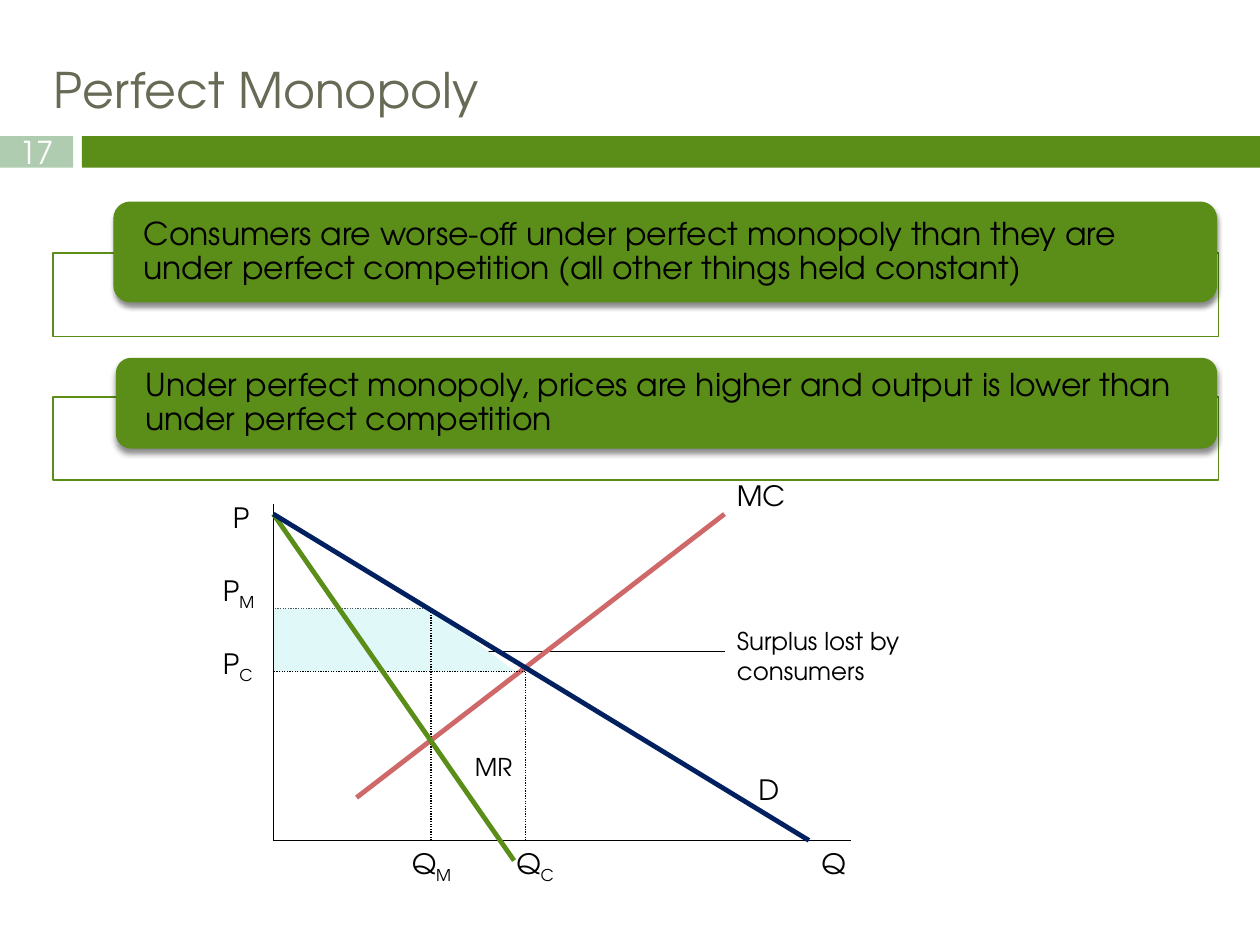
import pptx
import pptx.dml.color
import pptx.enum.dml
import pptx.enum.shapes
import pptx.enum.text
import pptx.oxml
import pptx.oxml.ns
import pptx.util
from pptx.util import Inches

RGBColor = pptx.dml.color.RGBColor
Shape = pptx.enum.shapes.MSO_SHAPE
Anchor = pptx.enum.text.MSO_ANCHOR
Align = pptx.enum.text.PP_ALIGN

GREEN = RGBColor(0x5A, 0x8E, 0x19)
SAGE = RGBColor(0xB0, 0xCC, 0xB0)
OLIVE = RGBColor(0x67, 0x6A, 0x55)
RED = RGBColor(0xCF, 0x68, 0x68)
NAVY = RGBColor(0x00, 0x20, 0x60)
AQUA = RGBColor(0xE0, 0xF8, 0xF7)
BLACK = RGBColor(0, 0, 0)
WHITE = RGBColor(0xFF, 0xFF, 0xFF)

FONT = "TeX Gyre Adventor"
NAMESPACE = pptx.oxml.ns.nsdecls("a")
SHADOW = (
    f'<a:effectLst {NAMESPACE}><a:outerShdw blurRad="38100" dist="30480" dir="5400000" '
    'rotWithShape="0"><a:srgbClr val="000000"><a:alpha val="45000"/></a:srgbClr>'
    "</a:outerShdw></a:effectLst>"
)

presentation = pptx.Presentation()
presentation.slide_width = Inches(10)
presentation.slide_height = Inches(7.5)
slide = presentation.slides.add_slide(presentation.slide_layouts[6])


def add_box(kind, left, top, width, height, fill=None, text="", subscript="",
            size=16, color=BLACK, **frame_format):
    """Add a plain shape, or a text box when kind is None."""
    place = [Inches(value) for value in (left, top, width, height)]
    if kind is None:
        shape = slide.shapes.add_textbox(*place)
    else:
        shape = slide.shapes.add_shape(kind, *place)
        shape.shadow.inherit = False
        shape.fill.solid()
        shape.fill.fore_color.rgb = fill
        shape.line.fill.background()
    frame = shape.text_frame
    for name, value in {"word_wrap": True, **frame_format}.items():
        setattr(frame, name, value)
    for part in filter(None, (text, subscript)):
        run = frame.paragraphs[0].add_run()
        run.text = part
        run.font.color.rgb = color
        for name, value in {"name": FONT, "size": pptx.util.Pt(size)}.items():
            setattr(run.font, name, value)
        if part is subscript:
            run.font._element.set("baseline", "-25000")
    return shape


def add_line(start, end, color=BLACK, width=0.75, dotted=False):
    line = slide.shapes.add_connector(
        pptx.enum.shapes.MSO_CONNECTOR.STRAIGHT,
        *[Inches(value) for value in (*start, *end)])
    line.line.color.rgb = color
    line.line.width = pptx.util.Pt(width)
    if dotted:
        line.line.dash_style = pptx.enum.dml.MSO_LINE.ROUND_DOT
    line._element.spPr.append(pptx.oxml.parse_xml(f"<a:effectLst {NAMESPACE}/>"))
    return line


# Title, page number and header bar
add_box(Shape.RECTANGLE, 0.65, 1.08, 9.35, 0.25, GREEN)
number = add_box(Shape.RECTANGLE, 0, 1.08, 0.58, 0.25, SAGE, "17", size=18, color=WHITE,
                 margin_top=0, margin_bottom=0, vertical_anchor=Anchor.MIDDLE)
number.text_frame.paragraphs[0].alignment = Align.CENTER
add_box(None, 0.33, 0.42, 9.25, 0.65, text="Perfect Monopoly", size=28, color=OLIVE)

# Statements: a green banner over an outlined panel
statements = [
    (2.01, 0.90, 1.60, 8.76, 0.80,
     "Consumers are worse-off under perfect monopoly than they are "
     "under perfect competition (all other things held constant)"),
    (3.15, 0.92, 2.84, 8.74, 0.72,
     "Under perfect monopoly, prices are higher and output is lower than "
     "under perfect competition"),
]
for panel_top, left, top, width, height, text in statements:
    panel = add_box(Shape.RECTANGLE, 0.42, panel_top, 9.25, 0.66, WHITE)
    panel.line.color.rgb = GREEN
    panel.line.width = pptx.util.Pt(0.79)
    banner = add_box(Shape.ROUNDED_RECTANGLE, left, top, width, height, GREEN, text, size=18,
                     margin_left=Inches(0.2), margin_right=Inches(0.2),
                     margin_top=0, margin_bottom=0, vertical_anchor=Anchor.MIDDLE)
    paragraph = banner.text_frame.paragraphs[0]
    paragraph.alignment = Align.LEFT
    paragraph.line_spacing = 0.9
    properties = banner._element.spPr
    properties.remove(properties.find(pptx.oxml.ns.qn("a:effectLst")))
    properties.append(pptx.oxml.parse_xml(SHADOW))

# Key positions on the chart
axis_x, axis_y = 2.17, 6.67
monopoly_x, monopoly_y = 3.42, 4.83
competition_x, competition_y = 4.17, 5.33
intercept = (axis_x, 4.08)

# Pointer and monopoly price, behind the lost surplus
pointer = add_line((5.75, 5.17), (3.17, 5.17))
pointer.line._get_or_add_ln().append(
    pptx.oxml.parse_xml(f'<a:tailEnd {NAMESPACE} type="triangle"/>'))
add_line((monopoly_x, monopoly_y), (axis_x, monopoly_y), dotted=True)

# Marginal cost and lost surplus
add_line((2.83, 6.33), (5.75, 4.08), RED, 2.75)
surplus_height = competition_y - monopoly_y
add_box(Shape.RECTANGLE, axis_x, monopoly_y, monopoly_x - axis_x, surplus_height, AQUA)
add_box(Shape.RIGHT_TRIANGLE, monopoly_x, monopoly_y, 0.67, surplus_height, AQUA)

# Axes
add_line((axis_x, axis_y), (6.75, axis_y))
add_line((axis_x, 4), (axis_x, axis_y))

# Guides, marginal revenue and demand
add_line((competition_x, competition_y), (competition_x, axis_y), dotted=True)
add_line((competition_x, competition_y), (axis_x, competition_y), dotted=True)
add_line((monopoly_x, axis_y), (monopoly_x, monopoly_y), dotted=True)
add_line(intercept, (4.08, 6.83), GREEN, 2.75)
add_line(intercept, (6.42, axis_y), NAVY, 2.75)

# Labels
for left, top, text, subscript in [
    (5.75, 3.75, "MC", ""),
    (5.92, 6.08, "D", ""),
    (1.75, 3.92, "P", ""),
    (1.67, 4.50, "P", "M"),
    (1.67, 5.08, "P", "C"),
    (3.17, axis_y, "Q", "M"),
    (4.00, axis_y, "Q", "C"),
    (6.42, axis_y, "Q", ""),
]:
    add_box(None, left, top, 0.83, 0.37, text=text, subscript=subscript)
add_box(None, 3.67, 5.92, 0.67, 0.34, text="MR", size=14)
add_box(None, 5.75, 4.92, 1.92, 0.57, text="Surplus lost by consumers", size=14)

presentation.save("out.pptx")
